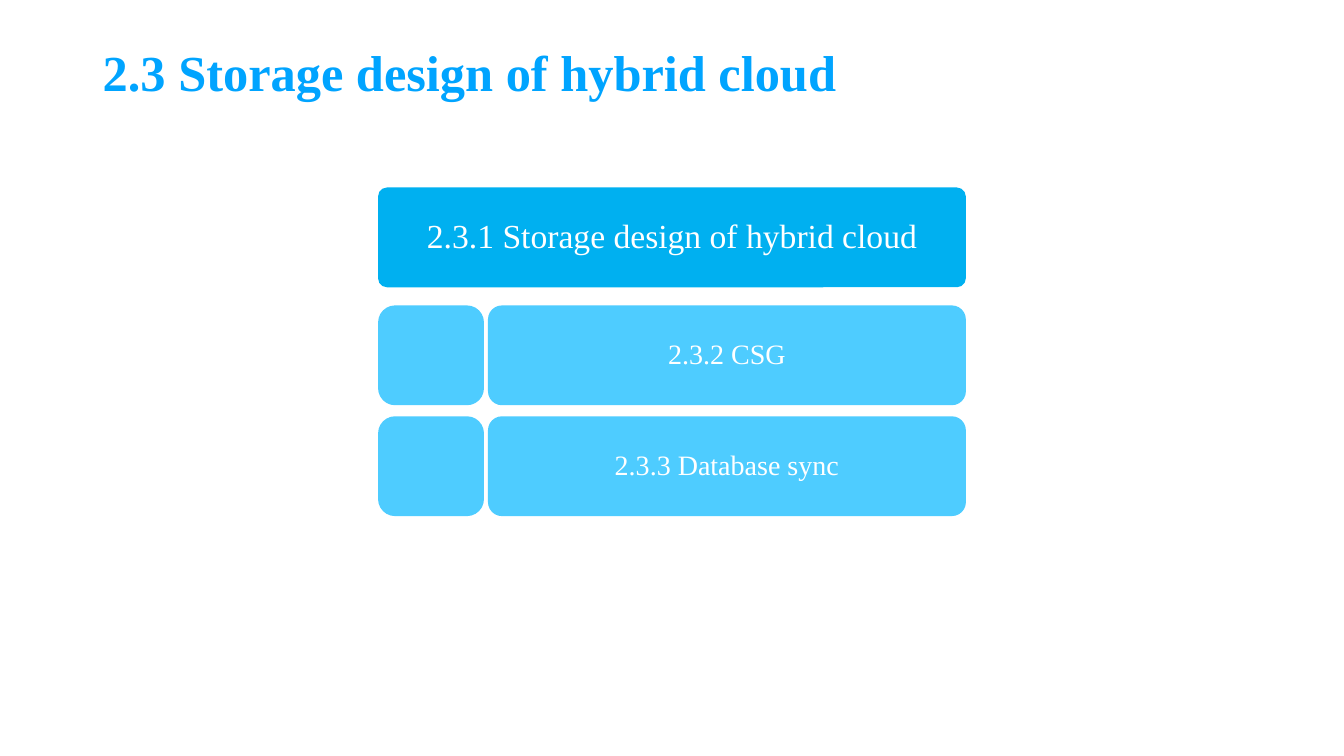
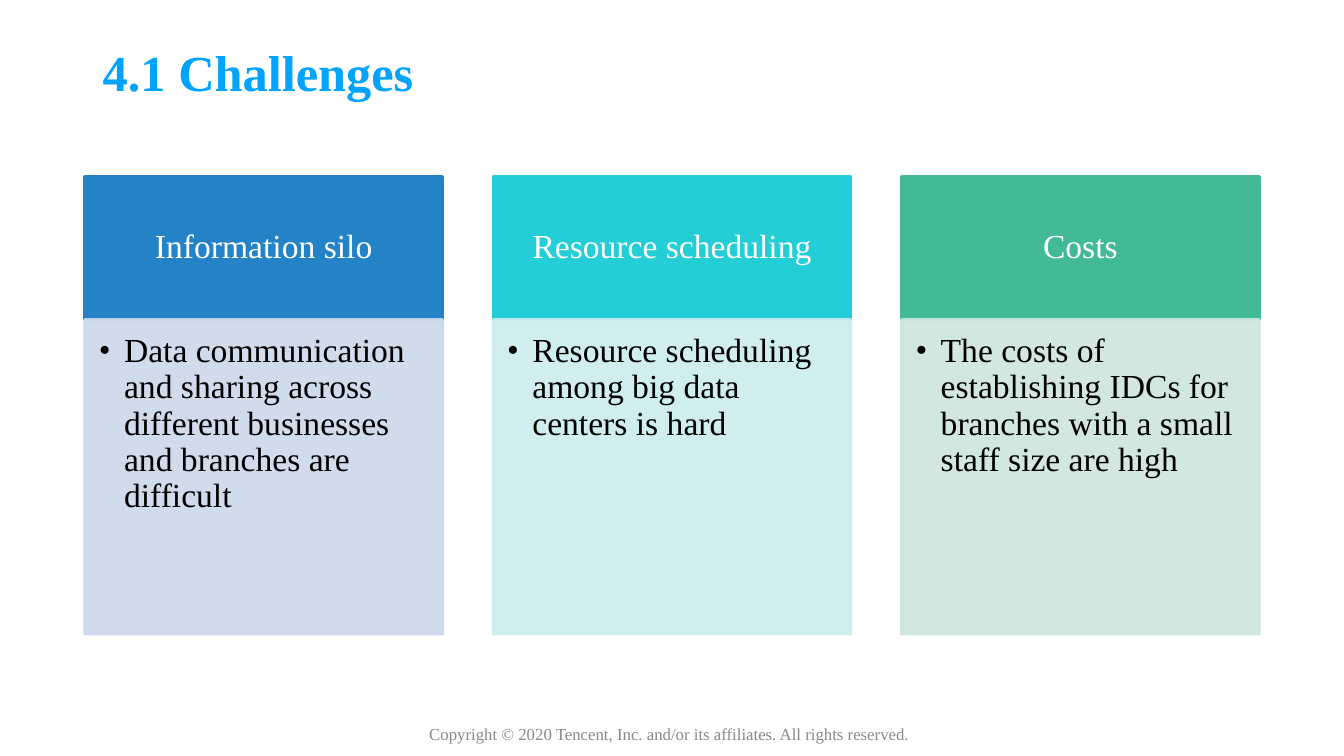
from lxml import etree
from pptx import Presentation
from pptx.dml.color import RGBColor
from pptx.enum.shapes import MSO_SHAPE
from pptx.enum.text import MSO_ANCHOR, PP_ALIGN
from pptx.oxml.ns import qn
from pptx.util import Inches, Pt

# Shared style
FONT = "Times New Roman"
TITLE_BLUE = RGBColor(0x00, 0xA4, 0xFF)
HEADER_BLUE = RGBColor(0x00, 0xB0, 0xF0)
ROW_BLUE = RGBColor(0x4E, 0xCC, 0xFF)
FOOTER_GRAY = RGBColor(0x89, 0x89, 0x89)
WHITE = RGBColor(0xFF, 0xFF, 0xFF)
BLACK = RGBColor(0x00, 0x00, 0x00)
LINE_SPACING = 0.9

# Content
AGENDA_TITLE = "2.3 Storage design of hybrid cloud"
AGENDA_HEADER = "2.3.1 Storage design of hybrid cloud"
AGENDA_ROWS = ["2.3.2 CSG", "2.3.3 Database sync"]

CHALLENGES_TITLE = "4.1 Challenges"
CHALLENGES = [  # heading, text, heading colour, body colour
    ("Information silo",
     "Data communication and sharing across different businesses and branches are difficult",
     RGBColor(0x23, 0x83, 0xC6), RGBColor(0xCB, 0xD8, 0xEA)),
    ("Resource scheduling",
     "Resource scheduling among big data centers is hard",
     RGBColor(0x24, 0xCE, 0xD7), RGBColor(0xCB, 0xED, 0xEF)),
    ("Costs",
     "The costs of establishing IDCs for branches with a small staff size are high",
     RGBColor(0x42, 0xBA, 0x97), RGBColor(0xCD, 0xE5, 0xDC)),
]
COPYRIGHT = "Copyright © 2020 Tencent, Inc. and/or its affiliates. All rights reserved."


def write(shape, text, size, color, align=PP_ALIGN.CENTER, anchor=MSO_ANCHOR.MIDDLE,
          margins=(0.1, 0.05, 0.1, 0.05), bold=False):
    """Fill a shape with one styled paragraph; margins are left, top, right, bottom."""
    frame = shape.text_frame
    frame.word_wrap = True
    frame.vertical_anchor = anchor
    (frame.margin_left, frame.margin_top,
     frame.margin_right, frame.margin_bottom) = map(Inches, margins)
    frame.text = text
    paragraph = frame.paragraphs[0]
    paragraph.alignment = align
    paragraph.line_spacing = LINE_SPACING
    font = paragraph.runs[0].font
    font.name, font.size, font.bold = FONT, Pt(size), bold
    font.color.rgb = color
    return paragraph


def add_text(slide, box, *args, **kwargs):
    return write(slide.shapes.add_textbox(*map(Inches, box)), *args, **kwargs)


def add_box(slide, box, fill, corner=None, outline=None):
    """Add a rectangle, rounded when a corner ratio is given."""
    kind = MSO_SHAPE.RECTANGLE if corner is None else MSO_SHAPE.ROUNDED_RECTANGLE
    shape = slide.shapes.add_shape(kind, *map(Inches, box))
    if corner is not None:
        shape.adjustments[0] = corner
    shape.shadow.inherit = False
    shape.fill.solid()
    shape.fill.fore_color.rgb = fill
    if outline is None:
        shape.line.fill.background()
    else:
        shape.line.color.rgb = outline
        shape.line.width = Pt(2)
    return shape


def set_opacity(shape, percent):
    """Make both the fill and the outline of a shape translucent."""
    for color in shape.element.spPr.iter(qn("a:srgbClr")):
        etree.SubElement(color, qn("a:alpha")).set("val", str(percent * 1000))


def add_bullet(paragraph, indent):
    properties = paragraph._p.get_or_add_pPr()
    properties.set("marL", str(Inches(indent)))
    properties.set("indent", str(-Inches(indent)))
    etree.SubElement(properties, qn("a:buFont")).set("typeface", FONT)
    etree.SubElement(properties, qn("a:buChar")).set("char", "•")


def new_slide(deck, title):
    slide = deck.slides.add_slide(deck.slide_layouts[6])
    add_text(slide, (0.92, 0.25, 10.74, 0.99), title, 36, TITLE_BLUE,
             align=PP_ALIGN.LEFT, bold=True)
    return slide


def build_agenda(deck):
    slide = new_slide(deck, AGENDA_TITLE)
    left, width, height = 3.75, 5.83, 0.99
    marker_width, gap = 1.05, 0.04
    rows_top, row_step = 3.03, 1.1

    # Header bar
    header = add_box(slide, (left, 1.86, width, height), HEADER_BLUE, corner=0.09)
    write(header, AGENDA_HEADER, 24, WHITE, margins=(0.08, 0.06, 0.08, 0.06))

    # Rows: a marker and a label
    label_left = left + marker_width + gap
    label_width = width - marker_width - gap
    for index, text in enumerate(AGENDA_ROWS):
        top = rows_top + index * row_step
        add_box(slide, (left, top, marker_width, height), ROW_BLUE, corner=0.17)
        label = add_box(slide, (label_left, top, label_width, height), ROW_BLUE, corner=0.14)
        write(label, text, 20, WHITE, margins=(0.19,) * 4)


def build_challenges(deck):
    slide = new_slide(deck, CHALLENGES_TITLE)
    left, top, width, step = 0.84, 1.75, 3.55, 4.05
    heading_height, body_height = 1.42, 3.12

    # Columns: a heading above a bulleted body
    for index, (heading_text, body_text, strong, pale) in enumerate(CHALLENGES):
        x = left + index * step
        heading = add_box(slide, (x, top, width, heading_height), strong, outline=strong)
        write(heading, heading_text, 24, WHITE, margins=(0.19, 0.11, 0.19, 0.11))

        body = add_box(slide, (x, top + heading_height, width, body_height), pale, outline=pale)
        set_opacity(body, 90)
        paragraph = write(body, body_text, 24, BLACK, align=PP_ALIGN.LEFT,
                          anchor=MSO_ANCHOR.TOP, margins=(0.14, 0.14, 0.19, 0.21))
        add_bullet(paragraph, 0.25)

    # Footer
    add_text(slide, (4.04, 7.09, 5.2, 0.4), COPYRIGHT, 12, FOOTER_GRAY)


def main():
    deck = Presentation()
    deck.slide_width, deck.slide_height = Inches(13.33), Inches(7.5)
    build_agenda(deck)
    build_challenges(deck)
    deck.save("out.pptx")


if __name__ == "__main__":
    main()
